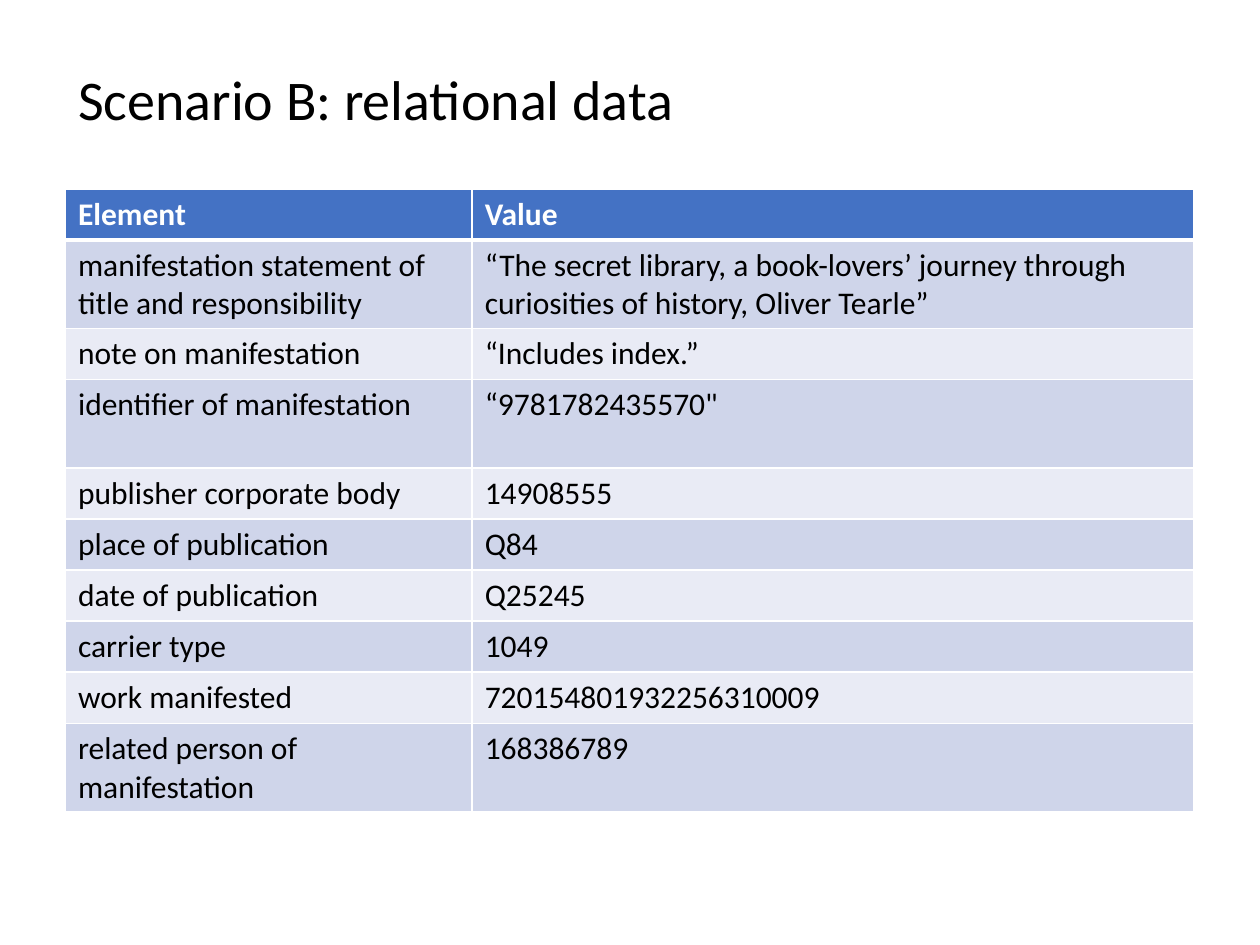
from dataclasses import dataclass

from lxml.etree import SubElement
from pptx import Presentation
from pptx.dml.color import RGBColor as Rgb
from pptx.enum.text import MSO_ANCHOR as Anchor, MSO_AUTO_SIZE as AutoSize, PP_ALIGN as Align
from pptx.oxml.ns import qn
from pptx.util import Cm, Pt

RECORD = [
    ("Element", "Value"),
    ("manifestation statement of title and responsibility",
     "“The secret library, a book-lovers’ journey through curiosities of history, Oliver Tearle”"),
    ("note on manifestation", "“Includes index.”"),
    ("identifier of manifestation", "“9781782435570\""),
    ("publisher corporate body", "14908555"),
    ("place of publication", "Q84"),
    ("date of publication", "Q25245"),
    ("carrier type", "1049"),
    ("work manifested", "720154801932256310009"),
    ("related person of manifestation", "168386789"),
]
TALL_ROWS = {1, 3, 9}
ROW_HEIGHT, TALL_HEIGHT = Cm(1.03), Cm(1.78)
COLUMN_WIDTHS = (Cm(8.2), Cm(14.55))
LEFT = Cm(1.32)


@dataclass(frozen=True)
class Theme:
    font: str = "Calibri"
    title_size: int = 32
    body_size: int = 18
    ink: str = "000000"
    paper: str = "FFFFFF"
    header: str = "4472C4"
    bands: tuple = ("E9EBF5", "CFD5EA")
    thin: int = 1
    thick: int = 3


class SlideWriter:
    """Holds the theme and the current slide, and adds elements to it."""

    def __init__(self, slide, theme):
        self.slide, self.theme = slide, theme

    def style(self, paragraph, size, color, bold=False):
        font = paragraph.font
        formats = {"name": self.theme.font, "size": Pt(size), "bold": bold}
        for key, value in formats.items():
            setattr(font, key, value)
        font.color.rgb = Rgb.from_string(color)

    def title(self, text, left, top, width, height):
        heading = self.slide.shapes.title
        place = {"left": left, "top": top, "width": width, "height": height}
        for key, value in place.items():
            setattr(heading, key, value)
        frame = heading.text_frame
        frame.text = text
        layout = {"word_wrap": False, "auto_size": AutoSize.SHAPE_TO_FIT_TEXT,
                  "vertical_anchor": Anchor.TOP}
        for key, value in layout.items():
            setattr(frame, key, value)
        frame.paragraphs[0].alignment = Align.LEFT
        self.style(frame.paragraphs[0], self.theme.title_size, self.theme.ink)

    def borders(self, cell, widths):
        properties = cell._tc.get_or_add_tcPr()
        for side, width in widths.items():
            line = SubElement(properties, qn(f"a:ln{side}"), w=str(Pt(width)))
            fill = SubElement(line, qn("a:solidFill"))
            SubElement(fill, qn("a:srgbClr"), val=self.theme.paper)

    def cell(self, cell, text, row):
        theme = self.theme
        is_header = row == 0
        self.borders(cell, {
            "L": theme.thin,
            "R": theme.thin,
            "T": theme.thick if row == 1 else theme.thin,
            "B": theme.thick if is_header else theme.thin,
        })
        cell.fill.solid()
        cell.fill.fore_color.rgb = Rgb.from_string(theme.header if is_header else theme.bands[row % 2])
        cell.text = text
        self.style(cell.text_frame.paragraphs[0], theme.body_size,
                   theme.paper if is_header else theme.ink, is_header)

    def table(self, records, left, top, widths, heights):
        grid = self.slide.shapes.add_table(
            len(records), len(widths), left, top, sum(widths), sum(heights)).table
        for column, width in zip(grid.columns, widths):
            column.width = width
        for row, (record, height) in enumerate(zip(records, heights)):
            grid.rows[row].height = height
            for column, text in enumerate(record):
                self.cell(grid.cell(row, column), text, row)


def main():
    deck = Presentation()
    deck.slide_width, deck.slide_height = Cm(25.4), Cm(19.05)
    writer = SlideWriter(deck.slides.add_slide(deck.slide_layouts[5]), Theme())
    writer.title("Scenario B: relational data", LEFT, Cm(1.17), Cm(12.65), Cm(1.63))
    heights = [TALL_HEIGHT if row in TALL_ROWS else ROW_HEIGHT for row in range(len(RECORD))]
    writer.table(RECORD, LEFT, Cm(3.81), COLUMN_WIDTHS, heights)
    deck.save("out.pptx")


if __name__ == "__main__":
    main()
